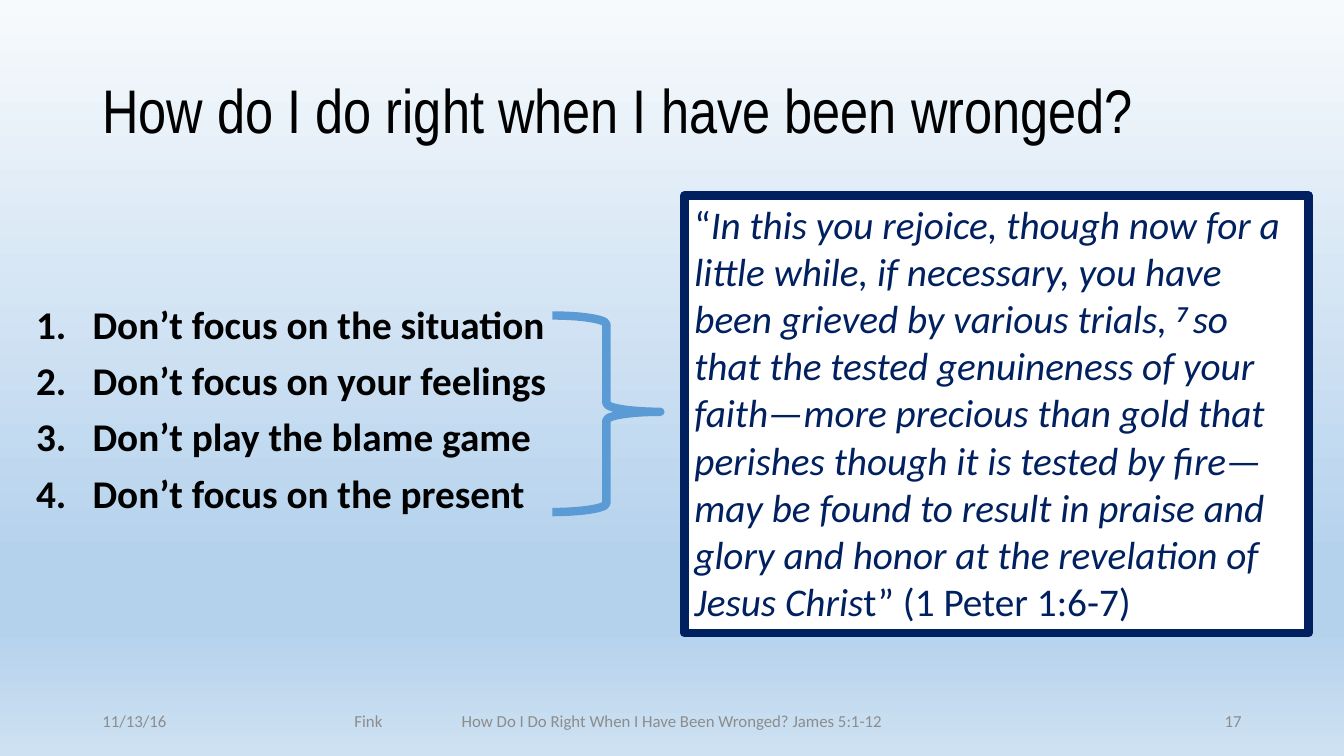
"""Build the slide that sets four pieces of advice beside a quotation from 1 Peter."""
import dataclasses
import typing

import pptx
import pptx.dml.color
import pptx.enum.shapes
import pptx.enum.text
import pptx.oxml
import pptx.oxml.ns
import pptx.shapes.autoshape
import pptx.slide
import pptx.text.text
import pptx.util

ALIGN = pptx.enum.text.PP_ALIGN
ANCHOR = pptx.enum.text.MSO_ANCHOR
SHAPE = pptx.enum.shapes.MSO_SHAPE
qn = pptx.oxml.ns.qn

WIDTH = pptx.util.Inches(13.33)
HEIGHT = pptx.util.Inches(7.5)
COLOURS = {
    "black": "000000",
    "grey": "8C8C8C",
    "navy": "002060",
    "blue": "5B9BD5",
    "white": "FFFFFF",
}
SKY = {0: "F7FAFD", 74: "B5D2EC", 83: "B5D2EC", 100: "CEE1F2"}
OUTLINE = pptx.util.Pt(6)
INDENT = pptx.util.Inches(0.56)
NAME_TAB = pptx.util.Inches(2.5)


@dataclasses.dataclass(frozen=True)
class Area:
    """Place on the slide, in percent of its width and height."""

    left: float
    top: float
    width: float
    height: float

    def lengths(self) -> tuple[int, int, int, int]:
        return (
            int(WIDTH * self.left / 100),
            int(HEIGHT * self.top / 100),
            int(WIDTH * self.width / 100),
            int(HEIGHT * self.height / 100),
        )


@dataclasses.dataclass(frozen=True)
class Span:
    """Stretch of text with its own font values."""

    text: str
    font: dict[str, typing.Any] = dataclasses.field(default_factory=dict)
    raised: bool = False


@dataclasses.dataclass(frozen=True)
class Style:
    """Look shared by all text of one box."""

    colour: str
    font: dict[str, typing.Any]
    para: dict[str, typing.Any] = dataclasses.field(default_factory=dict)
    anchor: ANCHOR = ANCHOR.TOP


@dataclasses.dataclass(frozen=True)
class TextBox:
    """Text, one list of spans for each paragraph, with its place and style."""

    area: Area
    style: Style
    paras: list[list[Span]]


def font_format(size: int, name: str = "Calibri", **extra: bool) -> dict[str, typing.Any]:
    return {"name": name, "size": pptx.util.Pt(size), **extra}


def footer_style(alignment: ALIGN) -> Style:
    return Style("grey", font_format(12), {"alignment": alignment}, ANCHOR.MIDDLE)


TITLE = TextBox(
    Area(6.88, 5.33, 86.25, 19.33),
    Style("black", font_format(44, "Arial Narrow"), {"line_spacing": 0.9}, ANCHOR.MIDDLE),
    [[Span("How do I do right when I have been wronged?")]],
)
ADVICE = TextBox(
    Area(1.95, 39.73, 91.13, 50.4),
    Style(
        "black",
        font_format(28, bold=True),
        {"line_spacing": 0.9, "space_before": pptx.util.Pt(10)},
    ),
    [
        [Span("Don’t focus on the situation")],
        [Span("Don’t focus on your feelings")],
        [Span("Don’t play the blame game")],
        [Span("Don’t focus on the present")],
    ],
)
FOOTERS = [
    TextBox(Area(left, 92.67, width, 5.33), footer_style(alignment), [[Span(text)]])
    for left, width, alignment, text in [
        (6.88, 22.5, ALIGN.LEFT, "11/13/16\tFink"),
        (33.13, 33.75, ALIGN.CENTER, "How Do I Do Right When I Have Been Wronged? James 5:1-12"),
        (70.63, 22.5, ALIGN.RIGHT, "17"),
    ]
]
ITALIC = {"italic": True}
QUOTE = TextBox(
    Area(50.93, 25.87, 46.43, 57.87),
    Style("navy", font_format(28), {"alignment": ALIGN.LEFT}),
    [[
        Span("“"),
        Span("In this you rejoice, though now for a little while, if necessary, "
             "you have been grieved by various trials, ", ITALIC),
        Span("7 ", {"italic": True, "bold": True}, raised=True),
        Span("so that the tested genuineness of your faith—more precious than gold "
             "that perishes though it is tested by fire—may be found to result in "
             "praise and glory and honor at the revelation of Jesus Chris", ITALIC),
        Span("t” (1 Peter 1:6-7)"),
    ]],
)
BRACE = Area(41.1, 41.73, 8.03, 26)


def colour(name: str) -> pptx.dml.color.RGBColor:
    return pptx.dml.color.RGBColor.from_string(COLOURS[name])


def apply(target: typing.Any, values: dict[str, typing.Any]) -> None:
    for name, value in values.items():
        setattr(target, name, value)


def write(box: pptx.shapes.autoshape.Shape, content: TextBox) -> None:
    frame = box.text_frame
    apply(frame, {"word_wrap": True, "vertical_anchor": content.style.anchor})
    for index, spans in enumerate(content.paras):
        para = frame.add_paragraph() if index else frame.paragraphs[0]
        apply(para, content.style.para)
        for span in spans:
            run = para.add_run()
            run.text = span.text
            apply(run.font, {**content.style.font, **span.font})
            run.font.color.rgb = colour(content.style.colour)
            if span.raised:
                run.font._element.set("baseline", "30000")


def add_text(page: pptx.slide.Slide, content: TextBox) -> pptx.shapes.autoshape.Shape:
    box = page.shapes.add_textbox(*content.area.lengths())
    write(box, content)
    return box


def add_outlined(
    page: pptx.slide.Slide, kind: SHAPE, area: Area, line: str
) -> pptx.shapes.autoshape.Shape:
    shape = page.shapes.add_shape(kind, *area.lengths())
    shape.shadow.inherit = False
    shape.fill.background()
    shape.line.color.rgb = colour(line)
    shape.line.width = OUTLINE
    return shape


def number(para: pptx.text.text._Paragraph) -> None:
    properties = para._p.get_or_add_pPr()
    properties.set("marL", str(INDENT))
    properties.set("indent", str(-INDENT))
    bullet = properties.makeelement(qn("a:buAutoNum"), {"type": "arabicPeriod"})
    properties.append(bullet)


def add_tab(para: pptx.text.text._Paragraph) -> None:
    properties = para._p.get_or_add_pPr()
    tabs = properties.makeelement(qn("a:tabLst"), {})
    tabs.append(tabs.makeelement(qn("a:tab"), {"pos": str(NAME_TAB), "algn": "l"}))
    properties.append(tabs)


def paint_sky(page: pptx.slide.Slide) -> None:
    fill = page.background.fill
    fill.gradient()
    fill.gradient_angle = 270
    stops = next(page.element.iter(qn("a:gsLst")))
    for stop in list(stops):
        stops.remove(stop)
    for share, value in SKY.items():
        stop = stops.makeelement(qn("a:gs"), {"pos": str(share * 1000)})
        stop.append(stop.makeelement(qn("a:srgbClr"), {"val": value}))
        stops.append(stop)


def main() -> None:
    deck = pptx.Presentation()
    apply(deck, {"slide_width": WIDTH, "slide_height": HEIGHT})
    page = deck.slides.add_slide(deck.slide_layouts[6])
    paint_sky(page)
    add_text(page, TITLE)
    for para in add_text(page, ADVICE).text_frame.paragraphs:
        number(para)
    date, *_ = [add_text(page, footer) for footer in FOOTERS]
    add_tab(date.text_frame.paragraphs[0])
    brace = add_outlined(page, SHAPE.RIGHT_BRACE, BRACE, "blue")
    brace.adjustments[0], brace.adjustments[1] = 0.08, 0.49
    quote = add_outlined(page, SHAPE.RECTANGLE, QUOTE.area, "navy")
    quote.fill.solid()
    quote.fill.fore_color.rgb = colour("white")
    write(quote, QUOTE)
    deck.save("out.pptx")


if __name__ == "__main__":
    main()
